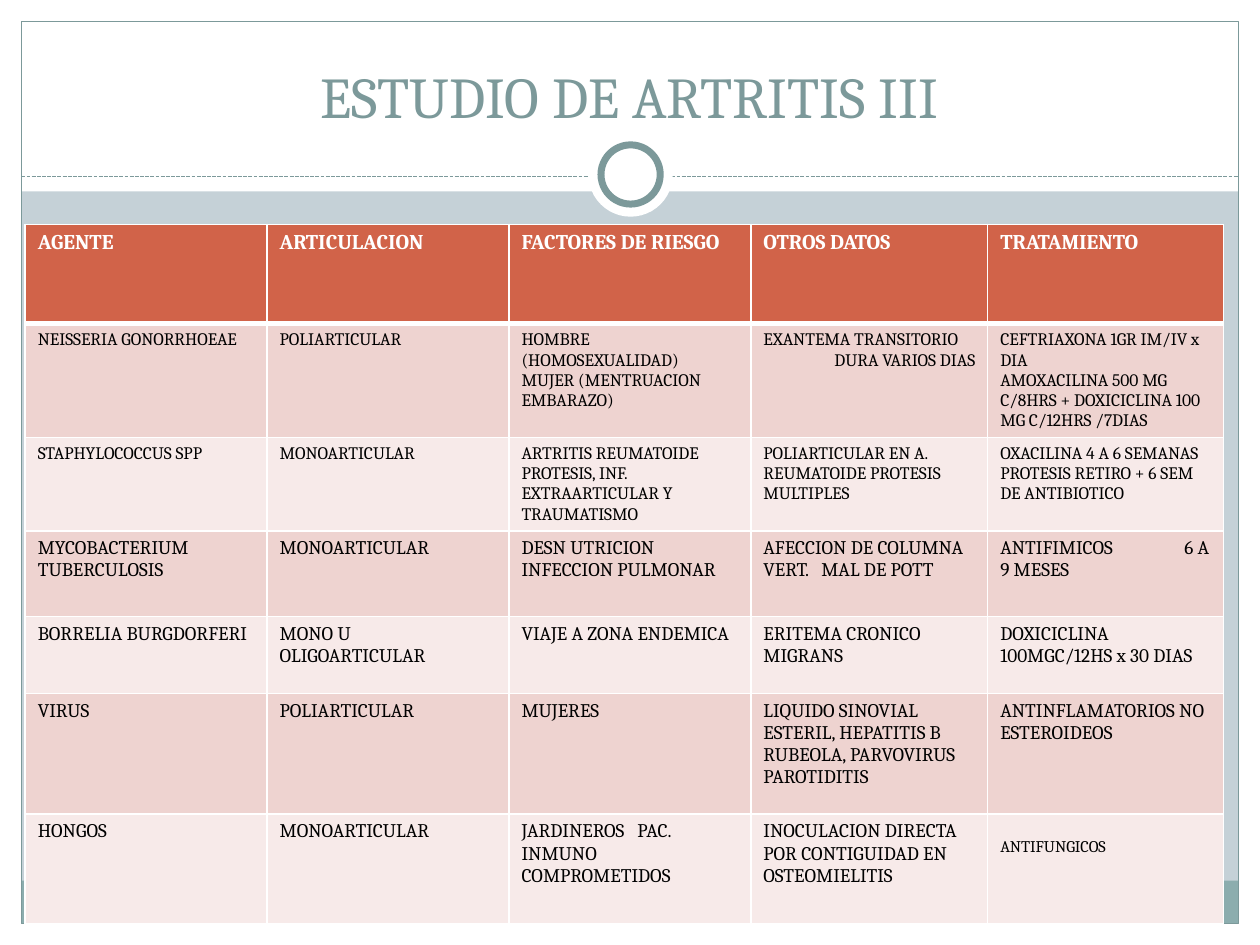
from lxml import etree
from pptx import Presentation
from pptx.dml.color import RGBColor
from pptx.enum.dml import MSO_LINE
from pptx.enum.shapes import MSO_CONNECTOR, MSO_SHAPE
from pptx.enum.text import MSO_ANCHOR, MSO_AUTO_SIZE, PP_ALIGN
from pptx.oxml.ns import qn
from pptx.util import Inches, Pt

RECTANGLE, OVAL = MSO_SHAPE.RECTANGLE, MSO_SHAPE.OVAL
STRAIGHT = MSO_CONNECTOR.STRAIGHT
SHORT_DASH = MSO_LINE.SQUARE_DOT
BOTTOM = MSO_ANCHOR.BOTTOM
NO_FIT = MSO_AUTO_SIZE.NONE
CENTER, LEFT, RIGHT = PP_ALIGN.CENTER, PP_ALIGN.LEFT, PP_ALIGN.RIGHT

FONT = "Cambria"
COLORS = {
    "background": "C5D1D7",
    "white": "FFFFFF",
    "black": "000000",
    "accent": "7C999A",
    "footer": "8CADAE",
    "header": "D16349",
    "dark band": "EED3D0",
    "light band": "F7EAE9",
}

COLUMN_WIDTHS = [1.92, 1.92, 1.92, 1.88, 1.87]
ROW_HEIGHTS = [0.79, 0.88, 0.72, 0.68, 0.61, 0.96, 0.87]
ROW_SIZES = [12, 10, 10, 11, 11, 11, 11]
ROWS = [
    ["AGENTE", "ARTICULACION", "FACTORES DE RIESGO", "OTROS DATOS", "TRATAMIENTO"],
    ["NEISSERIA GONORRHOEAE", "POLIARTICULAR",
     "HOMBRE (HOMOSEXUALIDAD)\nMUJER (MENTRUACION EMBARAZO)",
     "EXANTEMA TRANSITORIO\nDURA VARIOS DIAS",
     "CEFTRIAXONA 1GR IM/IV x DIA\n"
     "AMOXACILINA 500 MG C/8HRS + DOXICICLINA 100 MG C/12HRS /7DIAS"],
    ["STAPHYLOCOCCUS SPP", "MONOARTICULAR",
     "ARTRITIS REUMATOIDE\nPROTESIS, INF. EXTRAARTICULAR Y TRAUMATISMO",
     "POLIARTICULAR EN A. REUMATOIDE PROTESIS MULTIPLES",
     "OXACILINA 4 A 6 SEMANAS\nPROTESIS RETIRO + 6 SEM DE ANTIBIOTICO"],
    ["MYCOBACTERIUM TUBERCULOSIS", "MONOARTICULAR",
     "DESN UTRICION INFECCION PULMONAR",
     "AFECCION DE COLUMNA VERT.\tMAL DE POTT", "ANTIFIMICOS\t6 A 9 MESES"],
    ["BORRELIA BURGDORFERI", "MONO U OLIGOARTICULAR", "VIAJE A ZONA ENDEMICA",
     "ERITEMA CRONICO MIGRANS", "DOXICICLINA 100MGC/12HS x 30 DIAS"],
    ["VIRUS", "POLIARTICULAR", "MUJERES",
     "LIQUIDO SINOVIAL ESTERIL, HEPATITIS B RUBEOLA, PARVOVIRUS PAROTIDITIS",
     "ANTINFLAMATORIOS NO ESTEROIDEOS"],
    ["HONGOS", "MONOARTICULAR", "JARDINEROS\tPAC. INMUNO COMPROMETIDOS",
     "INOCULACION DIRECTA POR CONTIGUIDAD EN OSTEOMIELITIS", "ANTIFUNGICOS"],
]
TAB_STOPS = {(3, 3): 0.46, (3, 4): 1.46, (6, 2): 0.92}
RIGHT_ALIGNED = "DURA VARIOS DIAS"
SUBSCRIPT = "ANTIFUNGICOS"


def color(name):
    return RGBColor.from_string(COLORS[name])


def add_box(slide, kind, box, fill=None, line=None, width=0.75):
    shape = slide.shapes.add_shape(kind, *map(Inches, box))
    shape.shadow.inherit = False
    if fill:
        shape.fill.solid()
        shape.fill.fore_color.rgb = color(fill)
    else:
        shape.fill.background()
    if line:
        shape.line.color.rgb = color(line)
        shape.line.width = Pt(width)
    else:
        shape.line.fill.background()


def add_frame(slide, left, top, width, height):
    right, bottom = left + width, top + height
    margin, header_height, footer_height = 0.17, 1.52, 0.34
    inner_width = width - 2 * margin
    add_box(slide, RECTANGLE, (left, bottom - margin, width, margin), "white")
    add_box(slide, RECTANGLE, (left, top, width, header_height), "white")
    for edge in (left, right - margin):
        add_box(slide, RECTANGLE, (edge, top, margin, height), "white")
    add_box(slide, RECTANGLE,
            (left + margin, bottom - margin - footer_height, inner_width, footer_height),
            "footer")
    add_box(slide, RECTANGLE,
            (left + margin, top + margin, inner_width, height - 2 * margin), line="accent")


def add_divider(slide, left, top, width):
    divider = slide.shapes.add_connector(
        STRAIGHT, Inches(left), Inches(top), Inches(left + width), Inches(top))
    divider.line.color.rgb = color("accent")
    divider.line.width = Pt(0.75)
    divider.line.dash_style = SHORT_DASH
    etree.SubElement(divider._element.spPr, qn("a:effectLst"))


def add_ring(slide, left, top, size):
    inset = 0.1
    inner = size - 2 * inset
    add_box(slide, OVAL, (left, top, size, size), "white")
    add_box(slide, OVAL, (left + inset, top + inset, inner, inner), "white", "accent", 4)


def place_title(slide, left, top, width, height):
    title = slide.shapes.title
    title.left, title.top, title.width, title.height = map(
        Inches, (left, top, width, height))
    frame = title.text_frame
    frame.text = "ESTUDIO DE ARTRITIS III"
    frame.vertical_anchor = BOTTOM
    frame.auto_size = NO_FIT
    paragraph = frame.paragraphs[0]
    paragraph.alignment = CENTER
    format_font(paragraph.font, 33, "accent")
    slide.shapes._spTree.append(title._element)


def format_font(font, size, color_name, bold=False):
    font.name = FONT
    font.size = Pt(size)
    font.bold = bold
    font.color.rgb = color(color_name)


def add_tab_stop(paragraph, position):
    properties = paragraph._p.get_or_add_pPr()
    stops = etree.Element(qn("a:tabLst"))
    etree.SubElement(stops, qn("a:tab"), pos=str(Inches(position)), algn="l")
    properties.insert(0, stops)


def set_borders(cell, bottom_width):
    properties = cell._tc.get_or_add_tcPr()
    for index, (side, width) in enumerate(
            [("lnL", 1), ("lnR", 1), ("lnT", 1), ("lnB", bottom_width)]):
        border = etree.Element(qn(f"a:{side}"), w=str(Pt(width)))
        fill = etree.SubElement(border, qn("a:solidFill"))
        etree.SubElement(fill, qn("a:srgbClr"), val=COLORS["white"])
        properties.insert(index, border)


def fill_cell(cell, text, row, column):
    is_header = row == 0
    band = "header" if is_header else "dark band" if row % 2 else "light band"
    cell.fill.solid()
    cell.fill.fore_color.rgb = color(band)
    set_borders(cell, 3 if is_header else 1)
    cell.text = text
    for paragraph in cell.text_frame.paragraphs:
        is_subscript = paragraph.text == SUBSCRIPT
        paragraph.alignment = RIGHT if paragraph.text == RIGHT_ALIGNED else LEFT
        format_font(paragraph.font, 16 if is_subscript else ROW_SIZES[row],
                    "white" if is_header else "black", is_header)
        if is_subscript:
            paragraph.runs[0]._r.get_or_add_rPr().set("baseline", "-25000")
        if (row, column) in TAB_STOPS:
            add_tab_stop(paragraph, TAB_STOPS[row, column])


def add_agent_table(slide, left, top, width, height):
    table = slide.shapes.add_table(
        len(ROWS), len(COLUMN_WIDTHS), *map(Inches, (left, top, width, height))).table
    table.horz_banding = False
    for column, column_width in zip(table.columns, COLUMN_WIDTHS):
        column.width = Inches(column_width)
    for row, row_height in zip(table.rows, ROW_HEIGHTS):
        row.height = Inches(row_height)
    for row, texts in enumerate(ROWS):
        for column, text in enumerate(texts):
            fill_cell(table.cell(row, column), text, row, column)


def main():
    presentation = Presentation()
    presentation.slide_width, presentation.slide_height = Inches(10), Inches(7.5)
    slide = presentation.slides.add_slide(presentation.slide_layouts[5])
    slide.background.fill.solid()
    slide.background.fill.fore_color.rgb = color("background")
    add_frame(slide, 0, 0, 10, 7.5)
    add_divider(slide, 0.17, 1.4, 9.66)
    add_ring(slide, 4.67, 1.05, 0.67)
    place_title(slide, 0.33, 0.25, 9.33, 0.83)
    add_agent_table(slide, 0.2, 1.78, sum(COLUMN_WIDTHS), sum(ROW_HEIGHTS))
    presentation.save("out.pptx")


if __name__ == "__main__":
    main()
